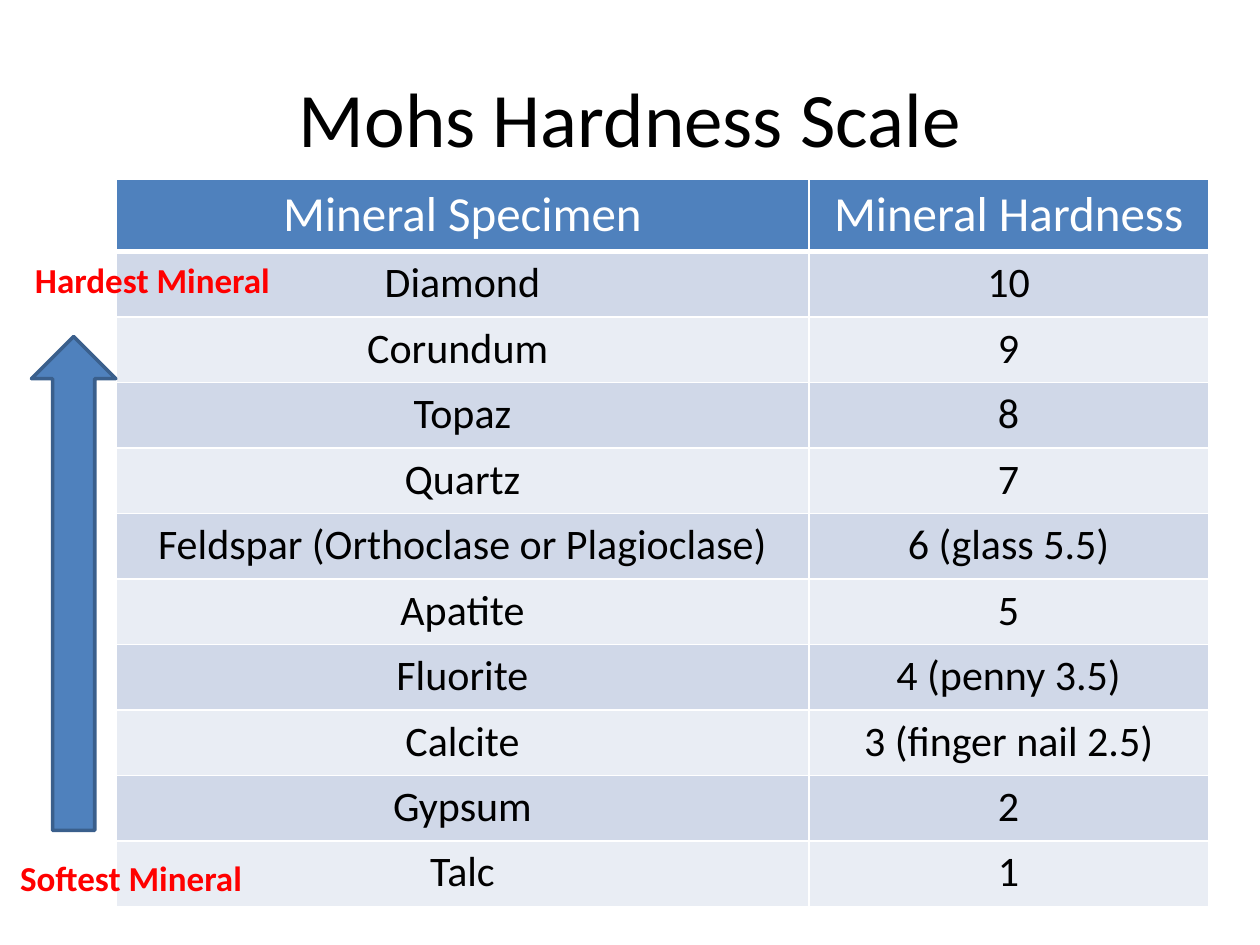
from lxml import etree
from pptx import Presentation
from pptx.dml.color import RGBColor
from pptx.enum import shapes, text
from pptx.oxml.ns import qn
from pptx.util import Inches, Pt

BLACK = RGBColor(0x00, 0x00, 0x00)
WHITE = RGBColor(0xFF, 0xFF, 0xFF)
RED = RGBColor(0xFF, 0x00, 0x00)
BLUE = RGBColor(0x4F, 0x81, 0xBD)
DARK_BLUE = RGBColor(0x3A, 0x5F, 0x8C)
BANDS = (RGBColor(0xE9, 0xED, 0xF4), RGBColor(0xD0, 0xD8, 0xE8))

TITLE_FORMAT = {"size": Pt(44), "bold": False}
HEADER_FORMAT = {"size": Pt(28), "bold": False}
MINERAL_FORMAT = {"size": Pt(24), "bold": False}
LABEL_FORMAT = {"size": Pt(20), "bold": True}

SCALE = [
    ("Mineral Specimen", "Mineral Hardness"),
    ("Diamond", "10"),
    ("Corundum ", "9"),
    ("Topaz", "8"),
    ("Quartz", "7"),
    ("Feldspar (Orthoclase or Plagioclase)", "6 (glass 5.5)"),
    ("Apatite", "5"),
    ("Fluorite", "4 (penny 3.5)"),
    ("Calcite", "3 (finger nail 2.5)"),
    ("Gypsum", "2"),
    ("Talc", "1"),
]


def write(frame, wording, color, font_format):
    frame.word_wrap = True
    paragraph = frame.paragraphs[0]
    paragraph.alignment = text.PP_ALIGN.CENTER
    run = paragraph.add_run()
    run.text = wording
    run.font.name = "Calibri"
    run.font.color.rgb = color
    for attribute, value in font_format.items():
        setattr(run.font, attribute, value)


def add_border(cell, bottom_width):
    properties = cell._tc.get_or_add_tcPr()
    for index, side in enumerate("LRTB"):
        width = bottom_width if side == "B" else Pt(1)
        line = etree.Element(qn(f"a:ln{side}"), w=str(width))
        fill = etree.SubElement(line, qn("a:solidFill"))
        etree.SubElement(fill, qn("a:srgbClr"), val=str(WHITE))
        properties.insert(index, line)


def place_title(slide, left, top, width, height):
    title = slide.shapes.title
    box = {"left": left, "top": top, "width": width, "height": height}
    for attribute, value in box.items():
        setattr(title, attribute, Inches(value))
    title.text_frame.vertical_anchor = text.MSO_ANCHOR.MIDDLE
    write(title.text_frame, "Mohs Hardness Scale", BLACK, TITLE_FORMAT)


def add_scale(slide, left, top, width, height):
    scale = slide.shapes.add_table(
        len(SCALE), 2, Inches(left), Inches(top), Inches(width), Inches(height)
    ).table
    specimen_width = 5.5
    scale.columns[0].width = Inches(specimen_width)
    scale.columns[1].width = Inches(width - specimen_width)
    for row, entries in enumerate(SCALE):
        header = row == 0
        for column, wording in enumerate(entries):
            cell = scale.cell(row, column)
            cell.fill.solid()
            cell.fill.fore_color.rgb = BLUE if header else BANDS[row % 2]
            add_border(cell, Pt(3) if header else Pt(1))
            write(cell.text_frame, wording, WHITE if header else BLACK,
                  HEADER_FORMAT if header else MINERAL_FORMAT)


def add_label(slide, wording, left, top, width, height):
    label = slide.shapes.add_textbox(
        Inches(left), Inches(top), Inches(width), Inches(height))
    write(label.text_frame, wording, RED, LABEL_FORMAT)
    label.text_frame.auto_size = text.MSO_AUTO_SIZE.SHAPE_TO_FIT_TEXT


def add_hardness_arrow(slide, left, top, width, height):
    arrow = slide.shapes.add_shape(
        shapes.MSO_SHAPE.UP_ARROW,
        Inches(left), Inches(top), Inches(width), Inches(height))
    arrow.shadow.inherit = False
    arrow.fill.solid()
    arrow.fill.fore_color.rgb = BLUE
    arrow.line.color.rgb = DARK_BLUE
    arrow.line.width = Pt(2)


def main():
    deck = Presentation()
    deck.slide_width, deck.slide_height = Inches(10), Inches(7.5)
    slide = deck.slides.add_slide(deck.slide_layouts[5])
    place_title(slide, 0.5, 0.3, 9, 1.25)
    add_scale(slide, 0.92, 1.42, 8.67, 0.52 * len(SCALE))
    add_label(slide, "Hardest Mineral", 0.17, 2, 2.08, 0.44)
    add_label(slide, "Softest Mineral", 0, 6.75, 2.08, 0.44)
    add_hardness_arrow(slide, 0.25, 2.67, 0.67, 3.92)
    deck.save("out.pptx")


if __name__ == "__main__":
    main()
